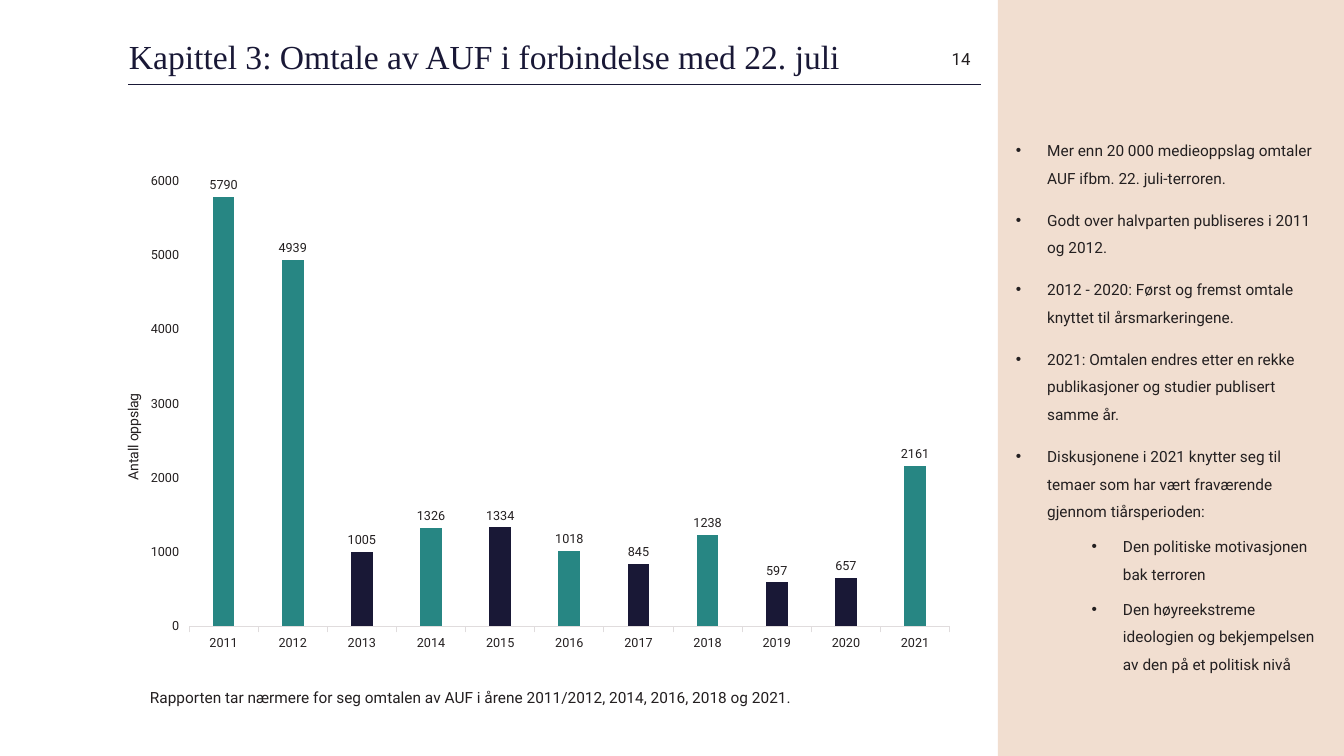
import pptx
import pptx.chart.data
import pptx.dml.color
import pptx.enum.chart
import pptx.enum.shapes
import pptx.enum.text
import pptx.oxml
import pptx.oxml.ns
import pptx.util
from pptx.util import Cm

COLORS = {"navy": "191836", "teal": "278683", "sand": "F1DED0",
          "ink": "231F20", "axis": "E0DCDD", "white": "FFFFFF"}
BODY_FONT = "Roboto"
TITLE_FONT = "Times New Roman"

MENTIONS = {2011: 5790, 2012: 4939, 2013: 1005, 2014: 1326, 2015: 1334, 2016: 1018,
            2017: 845, 2018: 1238, 2019: 597, 2020: 657, 2021: 2161}
FOCUS_YEARS = (2011, 2012, 2014, 2016, 2018, 2021)

FINDINGS = [
    (0, "Mer enn 20 000 medieoppslag omtaler AUF ifbm. 22. juli-terroren."),
    (0, "Godt over halvparten publiseres i 2011 og 2012."),
    (0, "2012 - 2020: Først og fremst omtale knyttet til årsmarkeringene."),
    (0, "2021: Omtalen endres etter en rekke publikasjoner og studier publisert samme år."),
    (0, "Diskusjonene i 2021 knytter seg til temaer som har vært fraværende "
        "gjennom tiårsperioden:"),
    (1, "Den politiske motivasjonen bak terroren"),
    (1, "Den høyreekstreme ideologien og bekjempelsen av den på et politisk nivå"),
]


def rgb(name):
    return pptx.dml.color.RGBColor.from_string(COLORS[name])


def set_font(font, size, color="ink", name=BODY_FONT):
    font.size = pptx.util.Pt(size)
    font.name = name
    font.bold = False
    font.color.rgb = rgb(color)


def write(para, text, size=11, color="ink", font=BODY_FONT, align="LEFT",
          spacing=None, before=0):
    para.alignment = getattr(pptx.enum.text.PP_ALIGN, align)
    para.line_spacing = spacing
    para.space_before = pptx.util.Pt(before)
    span = para.add_run()
    span.text = text
    set_font(span.font, size, color, font)


def prepare_frame(frame, anchor="TOP", inset=None):
    frame.word_wrap = True
    frame.auto_size = pptx.enum.text.MSO_AUTO_SIZE.NONE
    frame.vertical_anchor = getattr(pptx.enum.text.MSO_ANCHOR, anchor)
    if inset is not None:
        frame.margin_left = frame.margin_right = inset
        frame.margin_top = frame.margin_bottom = inset
    return frame


def add_box(page, left, top, width, height, **frame_format):
    box = page.shapes.add_textbox(left, top, width, height)
    return prepare_frame(box.text_frame, **frame_format)


def add_side_panel(page):
    panel = page.shapes.add_shape(pptx.enum.shapes.MSO_SHAPE.RECTANGLE,
                                  Cm(25.15), 0, Cm(8.72), Cm(19.05))
    panel.shadow.inherit = False
    panel.fill.solid()
    panel.fill.fore_color.rgb = rgb("sand")
    panel.line.fill.background()


def add_title_rule(page):
    rule = page.shapes.add_connector(pptx.enum.shapes.MSO_CONNECTOR.STRAIGHT,
                                     Cm(3.23), Cm(2.13), Cm(24.71), Cm(2.13))
    rule.line.color.rgb = rgb("navy")
    rule.line.width = pptx.util.Pt(0.75)
    properties = rule._element.spPr
    properties.append(properties.makeelement(pptx.oxml.ns.qn("a:effectLst"), {}))


def fill_title(page, text):
    title = page.shapes.title
    title.left, title.top, title.width, title.height = Cm(3.25), Cm(0.95), Cm(21.46), Cm(1.07)
    frame = prepare_frame(title.text_frame, anchor="MIDDLE", inset=0)
    write(frame.paragraphs[0], text, size=24, color="navy", font=TITLE_FONT, spacing=0.9)


def add_bullet(para, level):
    hanging = Cm(0.79)
    para.level = level
    properties = para._p.get_or_add_pPr()
    properties.set("marL", str(hanging + level * Cm(1.91)))
    properties.set("indent", str(-hanging))
    properties.append(pptx.oxml.parse_xml(
        f'<a:buFont {pptx.oxml.ns.nsdecls("a")} typeface="Arial"/>'))
    properties.append(pptx.oxml.parse_xml(
        f'<a:buChar {pptx.oxml.ns.nsdecls("a")} char="•"/>'))


def add_findings(page):
    frame = add_box(page, Cm(25.6), Cm(3.33), Cm(7.82), Cm(14.48), inset=0)
    for index, (level, text) in enumerate(FINDINGS):
        para = frame.add_paragraph() if index else frame.paragraphs[0]
        add_bullet(para, level)
        before = (10, 5)[level] if index else 0
        write(para, text, spacing=1.5, before=before)


def set_layout(parent, index, target=None, **position):
    """Give a chart part a fixed place, in fractions of the chart."""
    for old in parent.findall(pptx.oxml.ns.qn("c:layout")):
        parent.remove(old)
    inner = f'<c:layoutTarget val="{target}"/>' if target else ""
    modes = "".join(f'<c:{key}Mode val="edge"/>' for key in "xy")
    places = "".join(f'<c:{key} val="{value}"/>' for key, value in position.items())
    parent.insert(index, pptx.oxml.parse_xml(
        f'<c:layout {pptx.oxml.ns.nsdecls("c")}><c:manualLayout>'
        f'{inner}{modes}{places}</c:manualLayout></c:layout>'))


def format_axes(chart):
    years = chart.category_axis
    years.has_major_gridlines = False
    years.format.line.color.rgb = rgb("axis")
    years.format.line.width = pptx.util.Pt(0.75)

    counts = chart.value_axis
    counts.has_major_gridlines = False
    counts.minimum_scale, counts.maximum_scale, counts.major_unit = 0, 6000, 1000
    counts.format.line.fill.background()
    for axis in (years, counts):
        axis.major_tick_mark = pptx.enum.chart.XL_TICK_MARK.OUTSIDE
        set_font(axis.tick_labels.font, 9)

    write(counts.axis_title.text_frame.paragraphs[0], "Antall oppslag", size=10, align="CENTER")
    title = counts.axis_title._element
    body = next(title.iter(pptx.oxml.ns.qn("a:bodyPr")))
    body.set("rot", "-5400000")
    body.set("vert", "horz")
    # The title stays at the chart's left edge, clear of the tick labels
    set_layout(title, 1, x=0, y=0.49)


def add_mentions_chart(page):
    data = pptx.chart.data.CategoryChartData()
    data.categories = [str(year) for year in MENTIONS]
    data.add_series("Series 1", list(MENTIONS.values()))
    chart = page.shapes.add_chart(pptx.enum.chart.XL_CHART_TYPE.COLUMN_CLUSTERED,
                                  Cm(3.06), Cm(3.38), Cm(21.3), Cm(13.2), data).chart
    chart.has_legend = False
    chart.has_title = False
    set_font(chart.font, 10)
    format_axes(chart)

    # Columns, with the focus years in teal
    plot = chart.plots[0]
    plot.gap_width = 219
    plot.vary_by_categories = False
    columns = plot.series[0]
    columns.format.fill.solid()
    columns.format.fill.fore_color.rgb = rgb("navy")
    for index, year in enumerate(MENTIONS):
        if year in FOCUS_YEARS:
            fill = columns.points[index].format.fill
            fill.solid()
            fill.fore_color.rgb = rgb("teal")

    labels = columns.data_labels
    labels.show_value = True
    labels.position = pptx.enum.chart.XL_LABEL_POSITION.OUTSIDE_END
    set_font(labels.font, 9)
    plot_area = next(chart._chartSpace.iter(pptx.oxml.ns.qn("c:plotArea")))
    set_layout(plot_area, 0, target="inner", x=0.08, y=0.09, w=0.9, h=0.85)


def main():
    deck = pptx.Presentation()
    deck.slide_width, deck.slide_height = Cm(33.87), Cm(19.05)
    page = deck.slides.add_slide(deck.slide_layouts[5])
    page.background.fill.solid()
    page.background.fill.fore_color.rgb = rgb("white")

    # Frame and heading
    add_title_rule(page)
    add_side_panel(page)
    fill_title(page, "Kapittel 3: Omtale av AUF i forbindelse med 22. juli")
    number = add_box(page, Cm(21.89), Cm(0.95), Cm(2.82), Cm(1.07), anchor="MIDDLE")
    write(number.paragraphs[0], "14", size=12, align="RIGHT")

    # Content
    add_findings(page)
    add_mentions_chart(page)
    note = add_box(page, Cm(3.53), Cm(16.74), Cm(19.74), Cm(1.07))
    write(note.paragraphs[0], "Rapporten tar nærmere for seg omtalen av AUF i årene "
          "2011/2012, 2014, 2016, 2018 og 2021.", spacing=2.0)

    deck.save("out.pptx")


if __name__ == "__main__":
    main()
